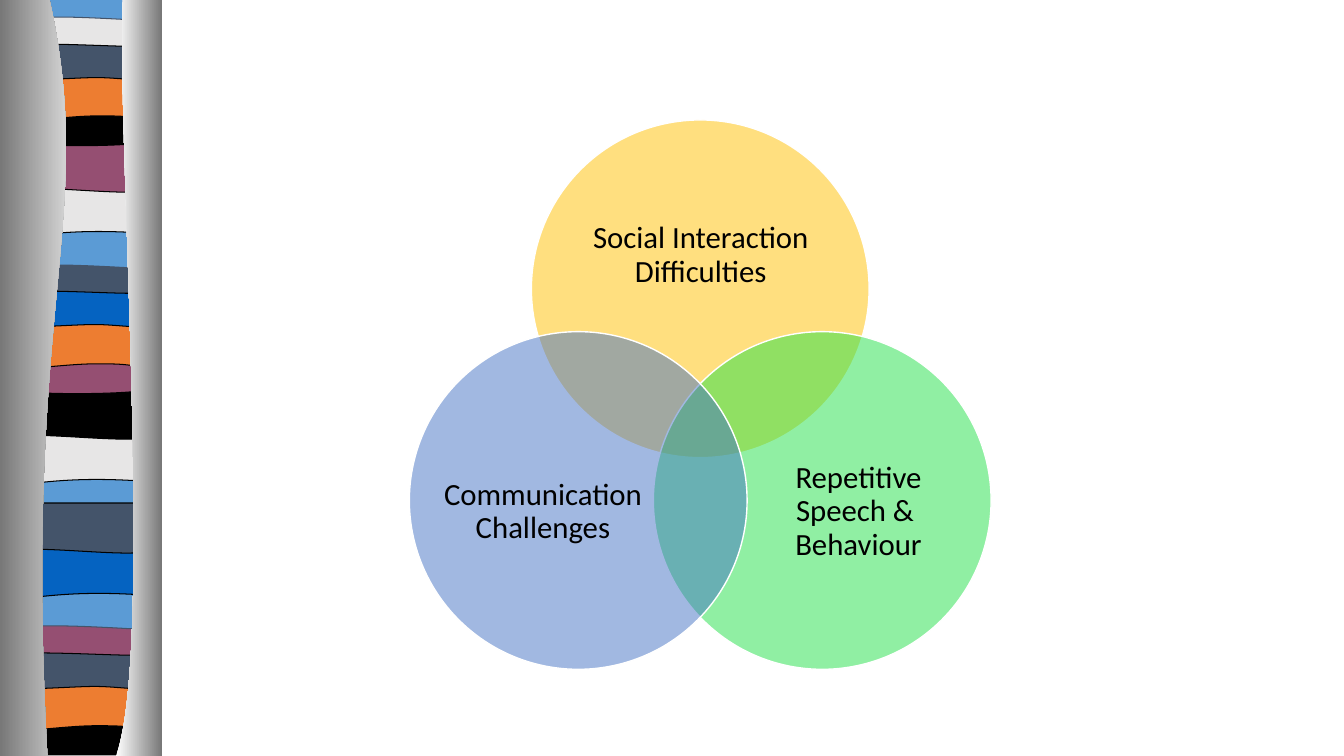
from lxml import etree
from pptx import Presentation
from pptx.dml.color import RGBColor
from pptx.enum.shapes import MSO_SHAPE
from pptx.enum.text import MSO_ANCHOR, PP_ALIGN
from pptx.oxml.ns import qn
from pptx.util import Inches, Pt

OVAL = MSO_SHAPE.OVAL
MIDDLE = MSO_ANCHOR.MIDDLE
CENTER = PP_ALIGN.CENTER

FONT = "Calibri"
BLACK, WHITE, GREY = "000000", "FFFFFF", "767676"
SKY, BLUE, SLATE = "5B9BD5", "0563C1", "44546A"
ORANGE, PLUM, PALE = "ED7D31", "954F72", "E7E6E6"
DIAMETER = 3.35

PROFILES = {
    "column": [(1.49, 0), (1.49, 7.48), (0, 7.48), (0, 0)],
    "wave": [(1.49, 0), (1.49, 0.47), (0.46, 0.39, 0.24, 0.55, 0, 0.47), (0, 0)],
    "swell": [(1.49, 0), (1.49, 0.47), (1.24, 0.55, 0.46, 0.42, 0, 0.47), (0, 0)],
    "slim": [(1.49, 0), (1.49, 0.24), (1.24, 0.28, 0.24, 0.28, 0, 0.24), (0, 0),
             (0.09, -0.05, 0.32, -0.04, 0.57, -0.04), (0.82, -0.04, 1.3, -0.01, 1.49, 0)],
    "bowl": [(1.49, 0), (1.49, 0.33), (1.24, 0.39, 0.25, 0.39, 0, 0.33), (0, 0),
             (0.92, 0.05, 1.18, 0, 1.49, 0)],
    "base": [(1.49, 0), (1.49, 0.37), (0, 0.37), (0, 0), (0.92, 0.05, 1.18, 0, 1.49, 0)],
    "arch": [(1.49, 0), (1.49, 0.47), (1.26, 0.41, 1.17, 0.41, 0.92, 0.41),
             (0.67, 0.41, 0.23, 0.47, 0, 0.47), (0, 0)],
    "ripple": [(1.49, 0), (1.49, 0.31), (1.39, 0.36, 1.16, 0.31, 0.92, 0.31),
               (0.67, 0.31, 0.15, 0.36, 0, 0.31), (0, 0),
               (0.21, -0.05, 1.01, 0, 1.26, 0), (1.51, 0, 1.44, 0, 1.49, 0)],
}

BANDS = [
    ("column", 0.04, -0.01, SKY, BLACK),
    ("wave", 0.04, 1.85, PALE, BLACK),
    ("swell", 0.04, 1.41, PLUM, BLACK),
    ("slim", 0.04, 0.21, PALE, SLATE),
    ("bowl", 0.04, 1.07, BLACK, BLACK),
    ("arch", 0.04, 0.74, ORANGE, BLACK),
    ("ripple", 0.04, 0.46, SLATE, BLACK),
    ("wave", 0.02, 4.31, PALE, BLACK),
    ("swell", 0.02, 3.86, BLACK, BLACK),
    ("slim", 0.02, 2.67, SLATE, SLATE),
    ("bowl", 0.02, 3.53, PLUM, BLACK),
    ("arch", 0.02, 3.2, ORANGE, BLACK),
    ("ripple", 0.02, 2.91, BLUE, BLACK),
    ("wave", 0.04, 5.44, BLUE, BLACK),
    ("swell", 0.04, 4.99, SLATE, BLACK),
    ("slim", 0.02, 6.25, PLUM, SLATE),
    ("base", 0.02, 7.12, BLACK, BLACK),
    ("arch", 0.02, 6.79, ORANGE, BLACK),
    ("ripple", 0.02, 6.5, SLATE, BLACK),
]

LEFT_EDGE = [(0.49, -0.01), (0.97, 2.17, 0.22, 2.96, 0.47, 7.5), (0, 7.5), (-0.01, -0.01)]
RIGHT_EDGE = [(1.22, -0.01), (1.15, 1.25, 1.54, 6.47, 1.15, 7.5), (1.61, 7.5), (1.61, 0)]

CIRCLES = [
    (5.27, 1.19, "FFC000", "Social Interaction Difficulties", (5.72, 1.78, 2.46, 1.51)),
    (6.48, 3.29, "23E148", "Repetitive Speech &  Behaviour", (7.51, 4.16, 2.01, 1.84)),
    (4.06, 3.29, "4472C4", "Communication Challenges", (4.38, 4.16, 2.01, 1.84)),
]


def color(code):
    """Turn a hex string into a colour."""
    return RGBColor.from_string(code)


def bend(shape, outline):
    """Turn each three segments of a six-number step into one Bezier curve."""
    segments = iter(list(shape._element.iter(qn("a:lnTo"))))
    for step in outline[1:]:
        segment = next(segments)
        if len(step) == 6:
            segment.tag = qn("a:cubicBezTo")
            for _ in range(2):
                control = next(segments)
                segment.append(control[0])
                control.getparent().remove(control)


def add_outline(shapes, outline, left=0, top=0):
    """Draw a closed outline of corners (two numbers) and Bezier curves (six)."""
    points = [(Inches(left + step[i]), Inches(top + step[i + 1]))
              for step in outline for i in range(0, len(step), 2)]
    builder = shapes.build_freeform(*points[0])
    builder.add_line_segments(points[1:], close=True)
    shape = builder.convert_to_shape()
    bend(shape, outline)
    shape.shadow.inherit = False
    return shape


def paint(shape, fill, line, width):
    """Give a shape a plain fill and line."""
    shape.fill.solid()
    shape.fill.fore_color.rgb = color(fill)
    shape.line.color.rgb = color(line)
    shape.line.width = Pt(width)


def add_band(shapes, profile, left, top, fill, line):
    """Add one coloured band of the column."""
    paint(add_outline(shapes, PROFILES[profile], left, top), fill, line, 0.75)


def add_edge(shapes, outline, start, end):
    """Add a shaded edge with a gradient from left to right."""
    edge = add_outline(shapes, outline)
    edge.fill.gradient()
    edge.fill.gradient_angle = 0
    for stop, code in zip(edge.fill.gradient_stops, (start, end)):
        stop.color.rgb = color(code)
    edge.line.fill.background()


def add_circle(shapes, left, top, fill):
    """Add a half-transparent circle."""
    circle = shapes.add_shape(OVAL, Inches(left), Inches(top), Inches(DIAMETER), Inches(DIAMETER))
    circle.shadow.inherit = False
    paint(circle, fill, WHITE, 1)
    tint = circle._element.spPr.find(qn("a:solidFill")).find(qn("a:srgbClr"))
    etree.SubElement(tint, qn("a:alpha")).set("val", "50000")


def add_label(shapes, text, place):
    """Add a centred label."""
    box = shapes.add_textbox(*(Inches(length) for length in place))
    frame = box.text_frame
    frame.word_wrap = True
    frame.vertical_anchor = MIDDLE
    frame.margin_left = frame.margin_right = frame.margin_top = frame.margin_bottom = 0
    para = frame.paragraphs[0]
    para.alignment = CENTER
    para.line_spacing = 0.9
    span = para.add_run()
    span.text = text
    span.font.name = FONT
    span.font.size = Pt(22)
    span.font.color.rgb = color(BLACK)


def main():
    """Build the slide and save it."""
    deck = Presentation()
    deck.slide_width = Inches(13.33)
    deck.slide_height = Inches(7.5)
    page = deck.slides.add_slide(deck.slide_layouts[6])
    column = page.shapes.add_group_shape().shapes
    for band in BANDS:
        add_band(column, *band)
    add_edge(column, LEFT_EDGE, GREY, WHITE)
    add_edge(column, RIGHT_EDGE, WHITE, GREY)
    venn = page.shapes.add_group_shape().shapes
    for left, top, fill, text, place in CIRCLES:
        add_circle(venn, left, top, fill)
        add_label(venn, text, place)
    deck.save("out.pptx")


if __name__ == "__main__":
    main()
